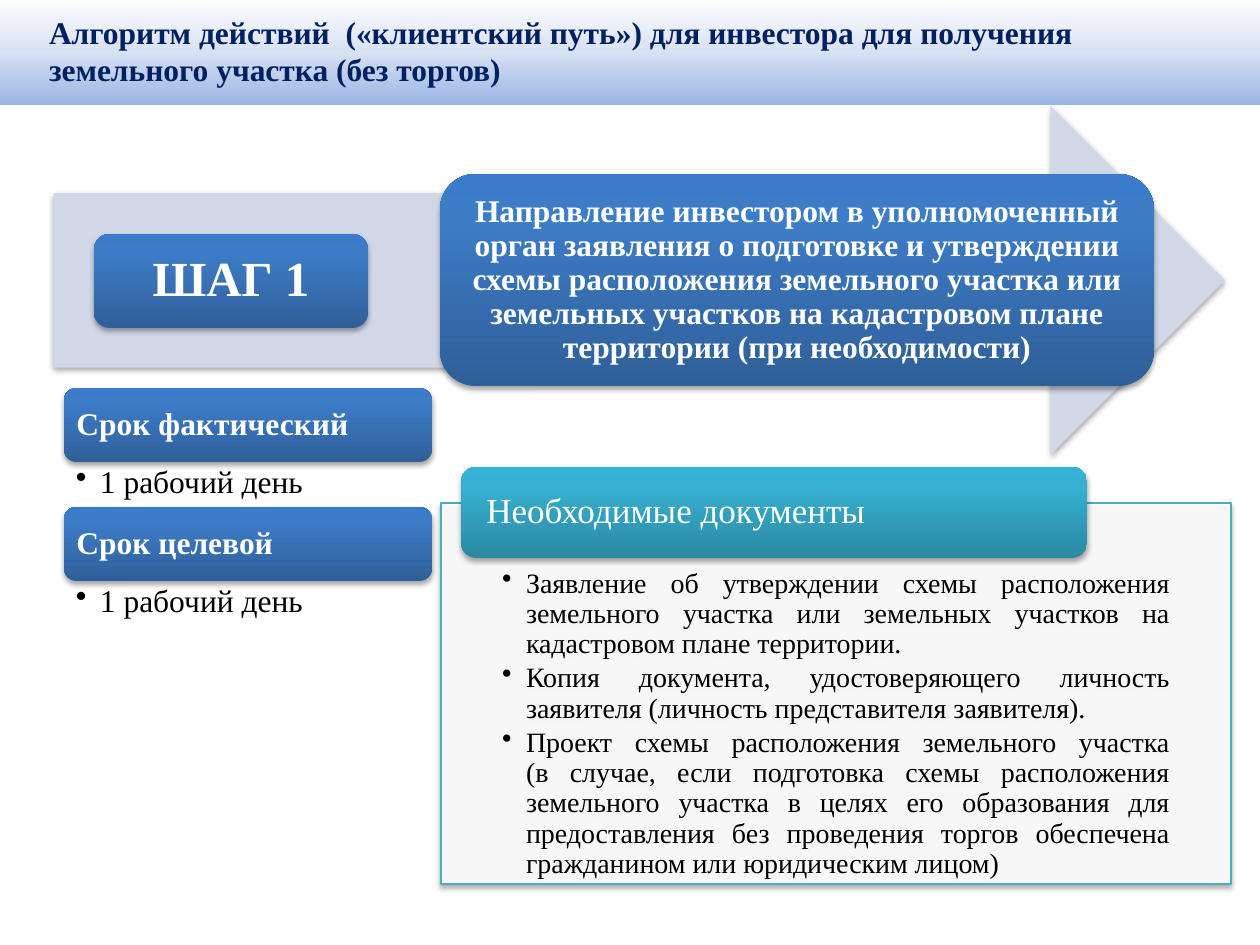
import dataclasses

import lxml.etree
import pptx
import pptx.dml.color
import pptx.enum.shapes
import pptx.enum.text
import pptx.oxml
import pptx.oxml.ns
import pptx.util

PX = 914400 / 126
SHAPE = pptx.enum.shapes.MSO_SHAPE
ALIGN = pptx.enum.text.PP_ALIGN
ANCHOR = pptx.enum.text.MSO_ANCHOR
NAMESPACE = pptx.oxml.ns.nsdecls("a")


@dataclasses.dataclass(frozen=True)
class Theme:
    font: str = "Times New Roman"
    title: str = "002060"
    light: str = "FFFFFF"
    dark: str = "000000"
    arrow: str = "D0D8E8"
    panel_line: str = "4BACC6"
    blue: tuple = ((0, "2F5F99"), (80, "3D7CC7"), (100, "3A7CCB"))
    teal: tuple = ((0, "2A88A2"), (80, "37B1D2"), (100, "34B4D6"))
    header: tuple = ((0, "9AB5E4"), (50, "D9E2F3"), (100, "FFFFFF"))
    step_size: int = 28
    heading_size: int = 20
    body_size: int = 18
    list_size: int = 16


THEME = Theme()


def px(value):
    return pptx.util.Emu(round(value * PX))


def rgb(value):
    return pptx.dml.color.RGBColor.from_string(value)


def place(shape, box):
    shape.left, shape.top, shape.width, shape.height = map(px, box)


def fill_gradient(shape, stops):
    """Fill from bottom to top with (percent, colour) stops."""
    shape.fill.gradient()
    shape.fill.gradient_angle = 90
    stop_list = shape.fill._fill._gradFill.find(pptx.oxml.ns.qn("a:gsLst"))
    for stop in list(stop_list):
        stop_list.remove(stop)
    for percent, color in stops:
        stop_list.append(pptx.oxml.parse_xml(
            f'<a:gs {NAMESPACE} pos="{percent * 1000}"><a:srgbClr val="{color}"/></a:gs>'))


def add_shadow(shape):
    shape.shadow.inherit = False
    effects = shape._element.spPr.find(pptx.oxml.ns.qn("a:effectLst"))
    effects.append(pptx.oxml.parse_xml(
        f'<a:outerShdw {NAMESPACE} blurRad="39370" dist="22860" dir="5400000" rotWithShape="0">'
        '<a:srgbClr val="000000"><a:alpha val="35000"/></a:srgbClr></a:outerShdw>'))


def add_box(slide, kind, box):
    shape = slide.shapes.add_shape(kind, *map(px, box))
    shape.line.fill.background()
    add_shadow(shape)
    return shape


def set_frame(shape, insets, anchor):
    frame = shape.text_frame
    frame.word_wrap = True
    frame.auto_size = pptx.enum.text.MSO_AUTO_SIZE.NONE
    frame.vertical_anchor = anchor
    frame.margin_left, frame.margin_top, frame.margin_right, frame.margin_bottom = map(px, insets)
    return frame


def write(paragraph, text, size, color, bold=False, align=ALIGN.LEFT, spacing=0.9):
    """Write text as runs, with a line break at each newline."""
    paragraph.alignment = align
    paragraph.line_spacing = spacing
    for index, line in enumerate(text.split("\n")):
        if index:
            paragraph.add_line_break()
        run = paragraph.add_run()
        run.text = line
        run.font.name = THEME.font
        run.font.size = pptx.util.Pt(size)
        run.font.bold = bold
        run.font.color.rgb = rgb(color)


def write_bullets(frame, items, size, align=ALIGN.LEFT):
    for index, item in enumerate(items):
        paragraph = frame.add_paragraph() if index else frame.paragraphs[0]
        write(paragraph, item, size, THEME.dark, align=align)
        paragraph.space_after = pptx.util.Pt(size * 0.15)
        properties = paragraph._p.get_or_add_pPr()
        properties.set("marL", str(px(24)))
        properties.set("indent", str(px(-24)))
        bullet = lxml.etree.SubElement(properties, pptx.oxml.ns.qn("a:buChar"))
        bullet.set("char", "•")


def add_card(slide, box, text, size, stops, insets, bold=True, align=ALIGN.LEFT):
    card = add_box(slide, SHAPE.ROUNDED_RECTANGLE, box)
    fill_gradient(card, stops)
    frame = set_frame(card, insets, ANCHOR.MIDDLE)
    write(frame.paragraphs[0], text, size, THEME.light, bold, align)


def add_title(slide, box, text):
    title = slide.shapes.title
    place(title, box)
    fill_gradient(title, THEME.header)
    frame = set_frame(title, (13, 6, 13, 6), ANCHOR.MIDDLE)
    paragraph = frame.paragraphs[0]
    write(paragraph, text, THEME.body_size, THEME.title, True, spacing=1.0)
    properties = paragraph._p.get_or_add_pPr()
    properties.set("marL", str(px(36)))
    properties.set("indent", "0")


def add_step(slide, box, label, action):
    left, top, _, _ = box
    arrow = add_box(slide, SHAPE.RIGHT_ARROW, box)
    arrow.fill.solid()
    arrow.fill.fore_color.rgb = rgb(THEME.arrow)
    add_card(slide, (left + 40, top + 128, 274, 94), label, THEME.step_size,
             THEME.blue, (15, 15, 15, 15), align=ALIGN.CENTER)
    add_card(slide, (left + 386, top + 68, 714, 212), action, THEME.body_size,
             THEME.blue, (9, 9, 9, 9), align=ALIGN.CENTER)


def add_terms(slide, box, terms):
    """Stack a heading card and its bulleted value for each term."""
    left, top, width, height = box
    pitch = height / len(terms)
    for index, (heading, value) in enumerate(terms):
        row_top = top + index * pitch
        add_card(slide, (left, row_top, width, 74), heading, THEME.body_size,
                 THEME.blue, (9, 9, 9, 9))
        text_box = slide.shapes.add_textbox(*map(px, (left, row_top + 74, width, 45)))
        frame = set_frame(text_box, (12, 4, 18, 4), ANCHOR.TOP)
        write_bullets(frame, [value], THEME.body_size)


def add_documents(slide, box, heading, documents):
    left, top, _, _ = box
    panel = add_box(slide, SHAPE.RECTANGLE, box)
    panel.fill.solid()
    panel.fill.fore_color.rgb = rgb(THEME.light)
    color = panel._element.spPr.find(".//" + pptx.oxml.ns.qn("a:srgbClr"))
    lxml.etree.SubElement(color, pptx.oxml.ns.qn("a:alpha")).set("val", "90000")
    panel.line.color.rgb = rgb(THEME.panel_line)
    panel.line.width = pptx.util.Pt(0.75)
    frame = set_frame(panel, (61, 66, 61, 15), ANCHOR.TOP)
    write_bullets(frame, documents, THEME.list_size, ALIGN.JUSTIFY)
    add_card(slide, (left + 20, top - 36, 626, 91), heading, THEME.heading_size,
             THEME.teal, (21, 0, 21, 0), bold=False)


def main():
    presentation = pptx.Presentation()
    presentation.slide_width, presentation.slide_height = px(1260), px(945)
    slide = presentation.slides.add_slide(presentation.slide_layouts[5])
    add_title(slide, (0, -4, 1260, 109),
              "Алгоритм действий  («клиентский путь») для инвестора для получения \n"
              "земельного участка (без торгов)")
    add_step(slide, (54, 106, 1171, 349), "ШАГ 1",
             "Направление инвестором в уполномоченный орган заявления о подготовке и "
             "утверждении схемы расположения земельного участка или земельных участков "
             "на кадастровом плане территории (при необходимости)")
    add_terms(slide, (64, 388, 368, 238),
              [("Срок фактический", "1 рабочий день"), ("Срок целевой", "1 рабочий день")])
    add_documents(slide, (441, 503, 790, 381), "Необходимые документы", [
        "Заявление об утверждении схемы расположения земельного участка или "
        "земельных участков на кадастровом плане территории.",
        "Копия документа, удостоверяющего личность заявителя "
        "(личность представителя заявителя).",
        "Проект схемы расположения земельного участка\n(в случае, если подготовка схемы "
        "расположения земельного участка в целях его образования для предоставления без "
        "проведения торгов обеспечена гражданином или юридическим лицом)",
    ])
    presentation.save("out.pptx")


if __name__ == "__main__":
    main()
